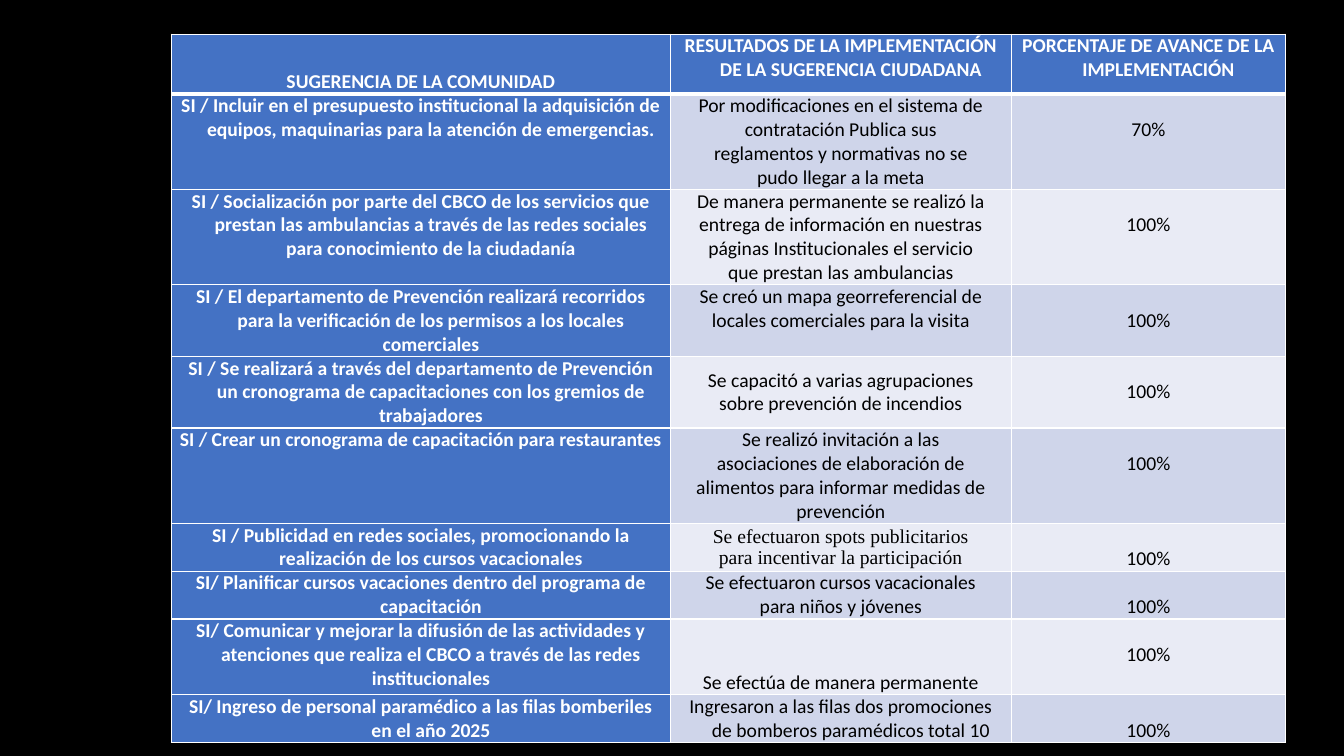
"""Builds a table slide of community suggestions, their results and progress."""
from lxml import etree
from pptx import Presentation
from pptx.dml.color import RGBColor
from pptx.enum.text import MSO_ANCHOR, PP_ALIGN
from pptx.oxml.ns import qn
from pptx.util import Pt

PX = 9144
TOP, MID, LOW = MSO_ANCHOR.TOP, MSO_ANCHOR.MIDDLE, MSO_ANCHOR.BOTTOM
CENTER = PP_ALIGN.CENTER
WHITE, BLACK, BLUE = "FFFFFF", "000000", "4472C4"
BANDS = ["E9EBF5", "CFD5EA"]
SANS, SERIF = "Calibri", "Times New Roman"
WIDTHS = [495, 338, 272]
HEADS = [
    "SUGERENCIA DE LA COMUNIDAD",
    "RESULTADOS DE LA IMPLEMENTACIÓN DE LA SUGERENCIA CIUDADANA",
    "PORCENTAJE DE AVANCE DE LA IMPLEMENTACIÓN",
]
ROWS = [
    (90 - 30, TOP, SANS, "70%",
     "SI / Incluir en el presupuesto institucional la adquisición de equipos, "
     "maquinarias para la atención de emergencias.",
     ["Por modificaciones en el sistema de", "contratación Publica sus",
      "reglamentos y normativas no se", "pudo llegar a la meta"]),
    (90, MID, SANS, "100%",
     "SI / Socialización por parte del CBCO de los servicios que prestan las ambulancias "
     "a través de las redes sociales para conocimiento de la ciudadanía",
     ["De manera permanente se realizó la", "entrega de información en nuestras",
      "páginas Institucionales el servicio", "que prestan las ambulancias"]),
    (60, TOP, SANS, "100%",
     "SI / El departamento de Prevención realizará recorridos para la verificación "
     "de los permisos a los locales comerciales",
     ["Se creó un mapa georreferencial de", "locales comerciales para la visita"]),
    (60, MID, SANS, "100%",
     "SI / Se realizará a través del departamento de Prevención un cronograma "
     "de capacitaciones con los gremios de trabajadores",
     ["Se capacitó a varias agrupaciones", "sobre prevención de incendios"]),
    (54, MID, SANS, "100%",
     "SI / Crear un cronograma de capacitación para restaurantes",
     ["Se realizó invitación a las", "asociaciones de elaboración de",
      "alimentos para informar medidas de", "prevención"]),
    (45, MID, SERIF, "100%",
     "SI / Publicidad en redes sociales, promocionando la realización "
     "de los cursos vacacionales",
     ["Se efectuaron spots publicitarios", "para incentivar la participación"]),
    (43, TOP, SANS, "100%",
     "SI/ Planificar cursos vacaciones dentro del programa de capacitación",
     ["Se efectuaron cursos vacacionales", "para niños y jóvenes"]),
    (75, LOW, SANS, "100%",
     "SI/ Comunicar y mejorar la difusión de las actividades y atenciones "
     "que realiza el CBCO a través de las redes institucionales",
     ["Se efectúa de manera permanente"]),
    (43, TOP, SANS, "100%",
     "SI/ Ingreso de personal paramédico a las filas bomberiles en el año 2025",
     ["Ingresaron a las filas dos promociones de bomberos paramédicos total 10"]),
]


def color(code):
    return RGBColor.from_string(code)


def put(cell, lines, fill, ink, bold, font=SANS, anchor=TOP, space=1.0, edges=(1, 1)):
    cell.margin_left = cell.margin_right = 7 * PX
    cell.margin_top = cell.margin_bottom = 0
    cell.vertical_anchor = anchor
    props = cell._tc.get_or_add_tcPr()
    for side, width in zip("LRTB", (1, 1, *edges)):
        line = etree.SubElement(props, qn(f"a:ln{side}"), w=str(Pt(width)))
        solid = etree.SubElement(line, qn("a:solidFill"))
        etree.SubElement(solid, qn("a:srgbClr"), val=WHITE)
    cell.fill.solid()
    cell.fill.fore_color.rgb = color(fill)
    frame = cell.text_frame
    for i, text in enumerate(lines):
        para = frame.add_paragraph() if i else frame.paragraphs[0]
        para.alignment = CENTER
        para.line_spacing = space
        indent = para._p.get_or_add_pPr()
        indent.set("marL", str(20 * PX))
        indent.set("indent", str(-20 * PX))
        run = para.add_run()
        run.text = text
        run.font.name = font
        run.font.size = Pt(14)
        run.font.bold = bold
        run.font.color.rgb = color(ink)


deck = Presentation()
deck.slide_width, deck.slide_height = 1333 * PX, 750 * PX
slide = deck.slides.add_slide(deck.slide_layouts[6])
slide.background.fill.solid()
slide.background.fill.fore_color.rgb = color(BLACK)

table = slide.shapes.add_table(
    len(ROWS) + 1, 3, 170 * PX, 34 * PX, sum(WIDTHS) * PX, 684 * PX).table
table.first_row = table.horz_banding = False
for column, width in zip(table.columns, WIDTHS):
    column.width = width * PX

table.rows[0].height = 47 * PX
for col, head in enumerate(HEADS):
    put(table.cell(0, col), [head], BLUE, WHITE, True,
        space=1.0 if col else 2.5, edges=(1, 3))

for row, (height, anchor, font, share, idea, result) in enumerate(ROWS, 1):
    table.rows[row].height = height * PX
    band = BANDS[row % 2]
    edges = (3 if row == 1 else 1, 1)
    put(table.cell(row, 0), [idea], BLUE, WHITE, True, edges=edges)
    put(table.cell(row, 1), result, band, BLACK, False, font, anchor, edges=edges)
    put(table.cell(row, 2), [share], band, BLACK, False, space=2.0, edges=edges)

deck.save("out.pptx")
